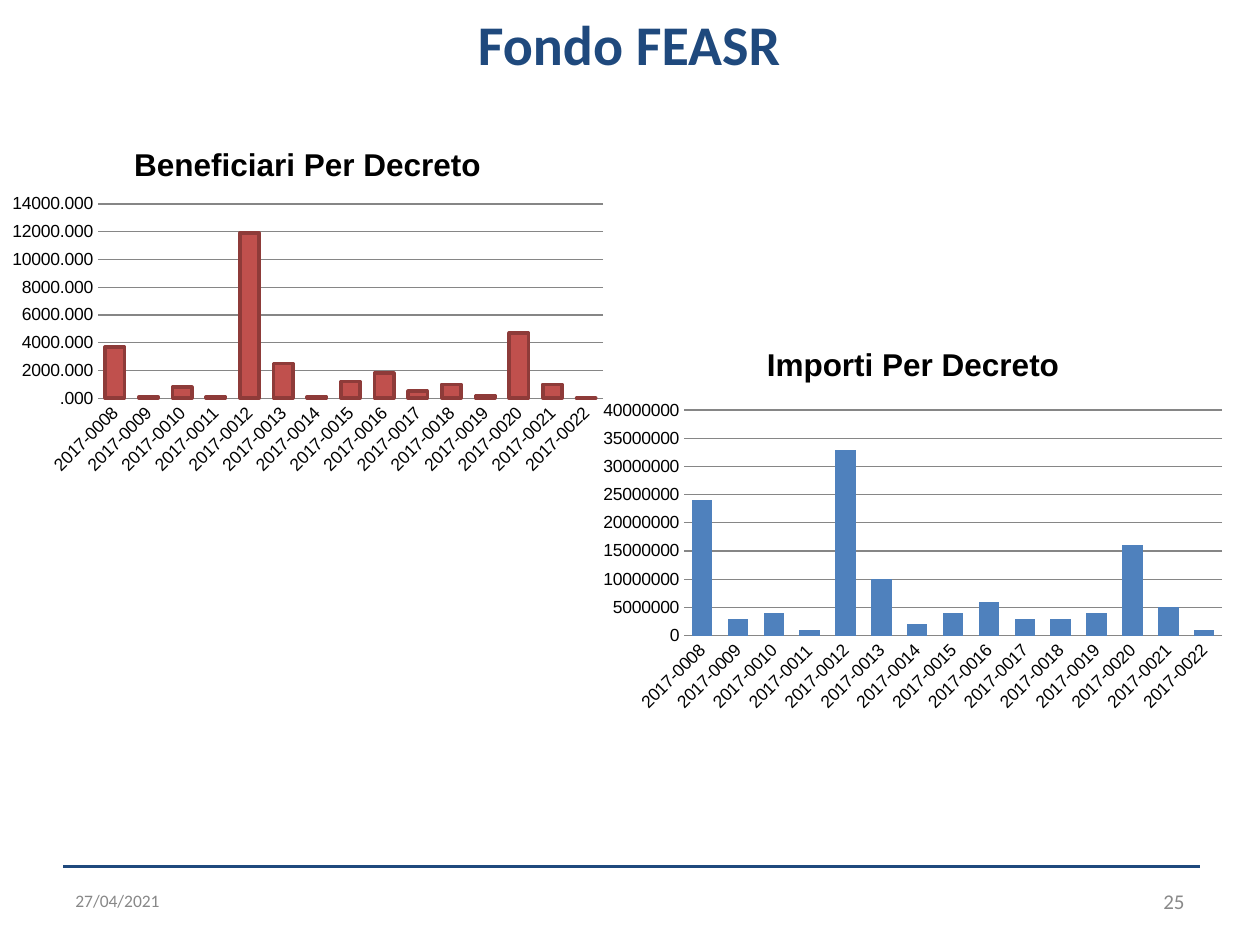
from pptx import Presentation
from pptx import util as u
from pptx.chart.data import CategoryChartData
from pptx.dml.color import RGBColor
from pptx.enum import chart as ch, shapes, text
from pptx.oxml.ns import qn
from lxml import etree

NAVY, GREY = "1F497D", "868686"
DECREES = [f"2017-{number:04d}" for number in range(8, 23)]
BENEFICIARIES = [3700, 100, 800, 100, 11900, 2500, 100, 1200,
                 1800, 500, 1000, 200, 4700, 1000, 0]
AMOUNTS = [million * 1_000_000 for million in
           (24, 3, 4, 1, 33, 10, 2, 4, 6, 3, 3, 4, 16, 5, 1)]


def colour(value):
    return RGBColor.from_string(value)


def box(left, top, width, height):
    return [u.Pt(length) for length in (left, top, width, height)]


def set_values(target, values):
    for name, value in values.items():
        setattr(target, name, value)


def style_font(font, hue, **values):
    set_values(font, values)
    font.color.rgb = colour(hue)


def style_line(line, hue, width):
    line.color.rgb = colour(hue)
    line.width = u.Pt(width)


def write(frame, wording, hue, size, align, anchor, bold=False):
    set_values(frame, {"word_wrap": True, "vertical_anchor": anchor,
                       "auto_size": text.MSO_AUTO_SIZE.NONE})
    paragraph = frame.paragraphs[0]
    paragraph.text = wording
    paragraph.alignment = align
    style_font(paragraph.runs[0].font, hue, name="Calibri", size=u.Pt(size), bold=bold)


def add_title(slide, wording):
    title = slide.shapes.title
    set_values(title, dict(zip(("left", "top", "width", "height"), box(7, 2, 705, 58))))
    write(title.text_frame, wording, NAVY, 32, text.PP_ALIGN.CENTER,
          text.MSO_ANCHOR.TOP, True)


def add_footer(slide, left, wording, hue, size, align):
    footer = slide.shapes.add_textbox(*box(left, 500.5, 168, 28.75))
    write(footer.text_frame, wording, hue, size, align, text.MSO_ANCHOR.MIDDLE)


def add_rule(slide):
    left, right, height = u.Pt(36), u.Pt(686), u.Pt(495)
    rule = slide.shapes.add_connector(shapes.MSO_CONNECTOR.STRAIGHT,
                                      left, height, right, height)
    style_line(rule.line, NAVY, 1.5)
    etree.SubElement(rule._element.spPr, qn("a:effectLst"))


def place_plot(chart, place, area):
    """Fix the inner plot area; both boxes are measured on the slide."""
    plot_area = chart._chartSpace.chart.plotArea
    for old in plot_area.findall(qn("c:layout")):
        plot_area.remove(old)
    layout = etree.Element(qn("c:layout"))
    plot_area.insert(0, layout)
    manual = etree.SubElement(layout, qn("c:manualLayout"))
    left, top, width, height = place
    fractions = ((area[0] - left) / width, (area[1] - top) / height,
                 area[2] / width, area[3] / height)
    settings = [("layoutTarget", "inner"), ("xMode", "edge"), ("yMode", "edge")]
    settings += [(tag, f"{part:.4f}") for tag, part in zip("xywh", fractions)]
    for tag, value in settings:
        etree.SubElement(manual, qn(f"c:{tag}")).set("val", value)


def style_axes(chart, top, step, number_format):
    for axis in (chart.category_axis, chart.value_axis):
        set_values(axis, {"major_tick_mark": ch.XL_TICK_MARK.NONE,
                          "minor_tick_mark": ch.XL_TICK_MARK.NONE})
        style_font(axis.tick_labels.font, "000000", name="Arial", size=u.Pt(10))
    style_line(chart.category_axis.format.line, GREY, 0.75)
    # Slanted decree numbers
    chart.category_axis._element.find(qn("c:txPr")).find(qn("a:bodyPr")).set("rot", "-2700000")
    values = chart.value_axis
    set_values(values, {"minimum_scale": 0, "maximum_scale": top, "major_unit": step,
                        "has_major_gridlines": True})
    style_line(values.major_gridlines.format.line, GREY, 0.75)
    values.format.line.fill.background()
    set_values(values.tick_labels, {"number_format": number_format,
                                    "number_format_is_linked": False})


def add_columns(slide, place, area, heading, amounts, fill, scale, outline=None):
    data = CategoryChartData()
    data.categories = DECREES
    data.add_series("Series 1", amounts)
    chart = slide.shapes.add_chart(ch.XL_CHART_TYPE.COLUMN_CLUSTERED,
                                   *box(*place), data).chart
    style_font(chart.font, "000000", name="Arial", size=u.Pt(10))
    set_values(chart, {"has_legend": False, "has_title": True})
    title = chart.chart_title
    title.include_in_layout = False
    title.text_frame.text = heading
    style_font(title.text_frame.paragraphs[0].runs[0].font, "000000",
               name="Arial", size=u.Pt(18), bold=True)
    place_plot(chart, place, area)
    style_axes(chart, *scale)
    # Columns
    plot = chart.plots[0]
    set_values(plot, {"gap_width": 75, "overlap": -25, "vary_by_categories": False})
    columns = plot.series[0].format
    columns.fill.solid()
    columns.fill.fore_color.rgb = colour(fill)
    if outline:
        style_line(columns.line, outline, 2)


def main():
    deck = Presentation()
    set_values(deck, {"slide_width": u.Pt(720), "slide_height": u.Pt(540)})
    slide = deck.slides.add_slide(deck.slide_layouts[5])
    # Footer
    add_rule(slide)
    add_footer(slide, 36, "27/04/2021", "888888", 10, text.PP_ALIGN.LEFT)
    add_footer(slide, 516, "25", "898989", 12, text.PP_ALIGN.RIGHT)
    # Charts
    add_columns(slide, (0, 71.3, 351.4, 203.8), (56, 116.6, 288.6, 111),
                "Beneficiari Per Decreto", BENEFICIARIES, "C0504D",
                (14000, 2000, "#.000"), "8E3B39")
    add_columns(slide, (337.5, 185, 368.5, 226.8), (391, 234.4, 307.4, 128.9),
                "Importi Per Decreto", AMOUNTS, "4F81BD",
                (40_000_000, 5_000_000, "General"))
    # Heading
    add_title(slide, "Fondo FEASR")
    deck.save("out.pptx")


if __name__ == "__main__":
    main()
